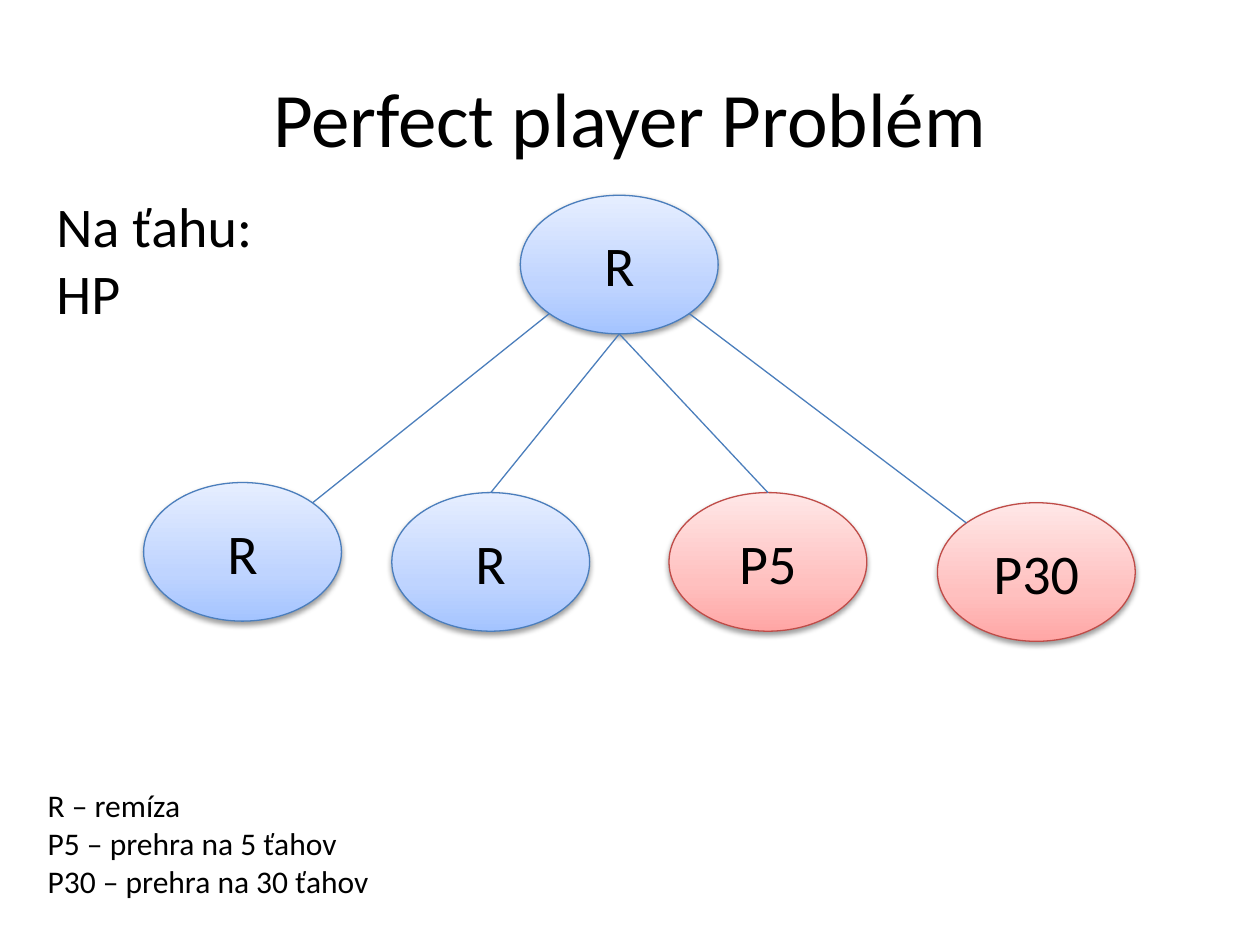
from lxml.etree import SubElement
from pptx import Presentation
from pptx.dml.color import RGBColor
from pptx.enum.shapes import MSO_CONNECTOR, MSO_SHAPE
from pptx.enum.text import MSO_ANCHOR, MSO_AUTO_SIZE, PP_ALIGN
from pptx.oxml.ns import qn
from pptx.util import Inches, Pt

FONT = "Calibri"
BLACK = "000000"
NODE_WIDTH, NODE_HEIGHT = 1.57, 1.1
DRAW = {"line": "4B7EBC", "stops": ((0, "A4C4FF"), (35, "BFD4FF"), (100, "E6EEFF"))}
LOSS = {"line": "BF4C48", "stops": ((0, "FFA6A5"), (35, "FFC0BF"), (100, "FFE7E7"))}
# Connection sites of an ellipse, as shares of its box
DIAGONAL = 0.5 / 2 ** 0.5
SITES = {
    0: (0.5, 0),
    1: (0.5 - DIAGONAL, 0.5 - DIAGONAL),
    3: (0.5 - DIAGONAL, 0.5 + DIAGONAL),
    4: (0.5, 1),
    5: (0.5 + DIAGONAL, 0.5 + DIAGONAL),
    7: (0.5 + DIAGONAL, 0.5 - DIAGONAL),
}


def color(hex_string):
    return RGBColor.from_string(hex_string)


def add_color(parent, hex_string):
    return SubElement(parent, qn("a:srgbClr"), val=hex_string)


def format_text(text_frame, size, alignment=PP_ALIGN.LEFT):
    for paragraph in text_frame.paragraphs:
        paragraph.alignment = alignment
        for run in paragraph.runs:
            run.font.name = FONT
            run.font.size = Pt(size)
            run.font.color.rgb = color(BLACK)


def add_title(slide, text):
    title = slide.shapes.title
    title.left, title.top, title.width, title.height = map(Inches, (0.5, 0.3, 9, 1.25))
    title.text_frame.text = text
    title.text_frame.vertical_anchor = MSO_ANCHOR.MIDDLE
    format_text(title.text_frame, 44, PP_ALIGN.CENTER)


def add_note(slide, box, text, size):
    text_frame = slide.shapes.add_textbox(*map(Inches, box)).text_frame
    text_frame.word_wrap = True
    text_frame.auto_size = MSO_AUTO_SIZE.SHAPE_TO_FIT_TEXT
    text_frame.text = text
    format_text(text_frame, size)


def fill_gradient(shape, stops):
    """Fill from the bottom up with the given (percent, colour) stops."""
    shape.fill.gradient()
    shape.fill.gradient_angle = 90
    stop_list = shape.element.spPr.find(qn("a:gradFill")).find(qn("a:gsLst"))
    for stop in list(stop_list):
        stop_list.remove(stop)
    for percent, hex_string in stops:
        add_color(SubElement(stop_list, qn("a:gs"), pos=str(percent * 1000)), hex_string)


def add_soft_shadow(shape):
    shape.shadow.inherit = False
    effects = shape.element.spPr.find(qn("a:effectLst"))
    shadow = SubElement(effects, qn("a:outerShdw"), blurRad="40000", dist="20000",
                        dir="5400000", rotWithShape="0")
    SubElement(add_color(shadow, BLACK), qn("a:alpha"), val="38000")


def add_node(slide, left, top, label, style):
    node = slide.shapes.add_shape(
        MSO_SHAPE.OVAL, *map(Inches, (left, top, NODE_WIDTH, NODE_HEIGHT)))
    fill_gradient(node, style["stops"])
    node.line.color.rgb = color(style["line"])
    node.line.width = Pt(0.75)
    add_soft_shadow(node)
    node.text_frame.text = label
    node.text_frame.vertical_anchor = MSO_ANCHOR.MIDDLE
    format_text(node.text_frame, 32, PP_ALIGN.CENTER)
    return node


def site_point(node, site):
    across, down = SITES[site]
    return int(node.left + across * node.width), int(node.top + down * node.height)


def add_branch(slide, parent, parent_site, child, child_site):
    """Join two ellipses at their numbered connection sites."""
    branch = slide.shapes.add_connector(
        MSO_CONNECTOR.STRAIGHT, *site_point(parent, parent_site), *site_point(child, child_site))
    branch.line.color.rgb = color(DRAW["line"])
    branch.line.width = Pt(0.75)
    SubElement(branch.element.spPr, qn("a:effectLst"))
    joints = branch.element.nvCxnSpPr.cNvCxnSpPr
    for tag, node, site in (("a:stCxn", parent, parent_site), ("a:endCxn", child, child_site)):
        SubElement(joints, qn(tag), id=str(node.shape_id), idx=str(site))


def add_game_tree(slide, left, top):
    """Place the root and its four moves relative to the tree's top left corner."""
    root = add_node(slide, left + 2.99, top, "R", DRAW)
    moves = (
        (0, 2.28, "R", DRAW, 3, 7),
        (1.97, 2.36, "R", DRAW, 4, 0),
        (4.17, 2.36, "P5", LOSS, 4, 0),
        (6.3, 2.44, "P30", LOSS, 5, 1),
    )
    for across, down, label, style, root_site, move_site in moves:
        move = add_node(slide, left + across, top + down, label, style)
        add_branch(slide, root, root_site, move, move_site)


def main():
    presentation = Presentation()
    presentation.slide_width, presentation.slide_height = Inches(10), Inches(7.5)
    slide = presentation.slides.add_slide(presentation.slide_layouts[5])
    add_title(slide, "Perfect player Problém")
    add_game_tree(slide, 1.14, 1.55)
    add_note(slide, (0.28, 6.19, 3.15, 1.01),
             "R – remíza\nP5 – prehra na 5 ťahov\nP30 – prehra na 30 ťahov", 18)
    add_note(slide, (0.35, 1.47, 1.97, 1.18), "Na ťahu: HP", 32)
    presentation.save("out.pptx")


if __name__ == "__main__":
    main()
